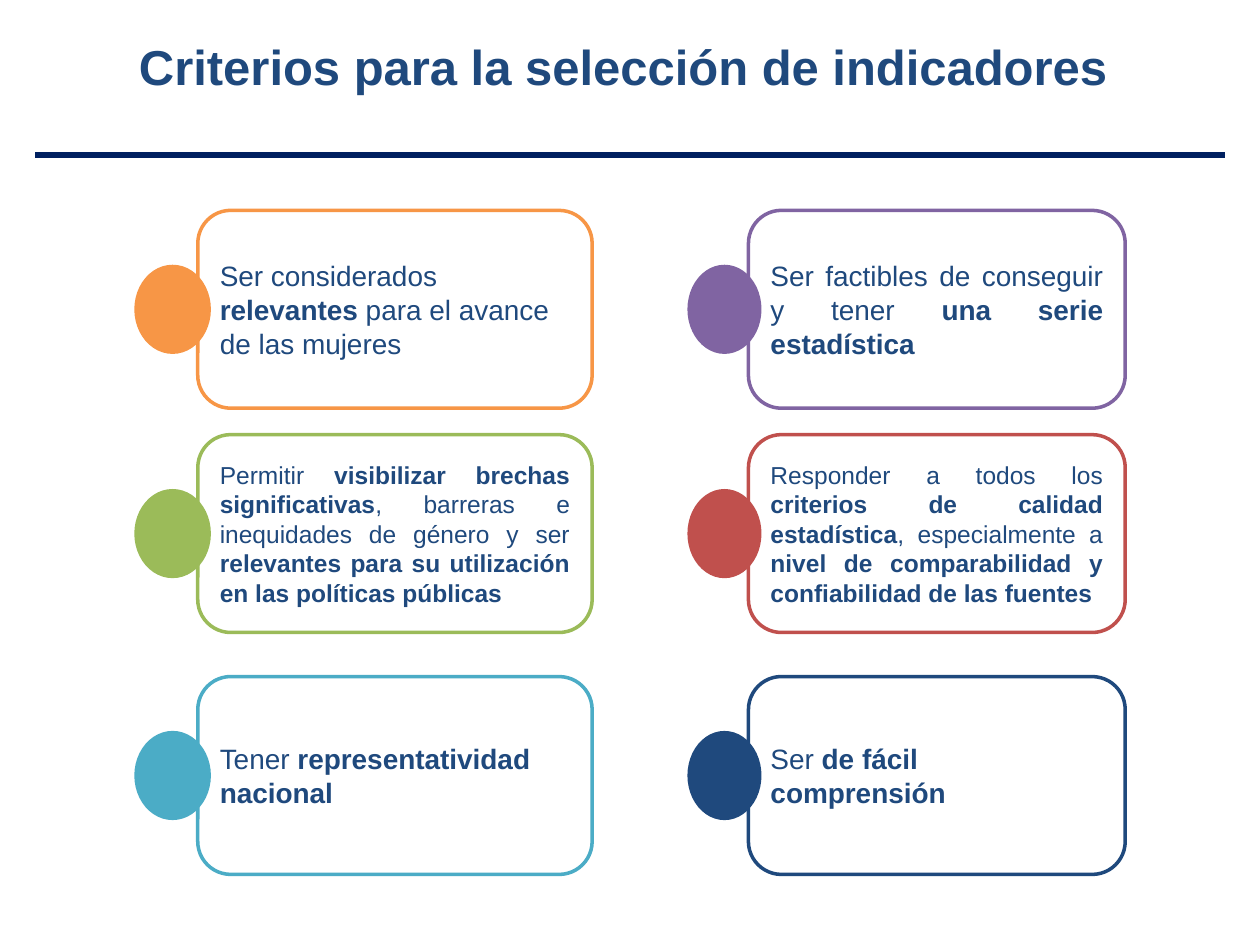
from pptx import Presentation
from pptx.dml.color import RGBColor
from pptx.enum.shapes import MSO_CONNECTOR as CONNECTOR, MSO_SHAPE as SHAPE
from pptx.enum.text import MSO_ANCHOR as ANCHOR, PP_ALIGN as ALIGN
from pptx.oxml.ns import qn
from pptx.util import Inches, Pt
from lxml.etree import SubElement

TITLE = "Criterios para la selección de indicadores"
INK, RULE = "1F497D", "002060"
ROW_TOPS = [1.67, 3.45, 5.37]
CARD_HEIGHT, DOT_HEIGHT = 1.57, 0.68
COLUMNS = [
    {"dot": (1.08, 0.58), "card": (1.57, 3.13), "criteria": [
        ("F79646", 16, ALIGN.LEFT,
         ["Ser considerados ", "relevantes", " para el avance de las mujeres"]),
        ("9BBB59", 14, ALIGN.JUSTIFY,
         ["Permitir ", "visibilizar brechas significativas",
          ", barreras e inequidades de género y ser ",
          "relevantes para su utilización en las políticas públicas"]),
        ("4BACC6", 16, ALIGN.LEFT, ["Tener ", "representatividad nacional"]),
    ]},
    {"dot": (5.47, 0.56), "card": (5.94, 2.99), "criteria": [
        ("8064A2", 16, ALIGN.JUSTIFY,
         ["Ser factibles de conseguir y tener ", "una serie estadística"]),
        ("C0504D", 14, ALIGN.JUSTIFY,
         ["Responder a todos los ", "criterios de calidad estadística",
          ", especialmente a ",
          "nivel de comparabilidad y confiabilidad de las fuentes"]),
        ("1F497D", 16, ALIGN.LEFT, ["Ser ", "de fácil\vcomprensión"]),
    ]},
]


def color(value):
    return RGBColor.from_string(value)


def write(paragraph, texts, size, align, first_bold=False):
    """Write runs that alternate between regular and bold."""
    paragraph.alignment = align
    for index, text in enumerate(texts):
        for part, piece in enumerate(text.split("\v")):
            if part:
                paragraph.add_line_break()
            span = paragraph.add_run()
            span.text = piece
            look = {"name": "Arial", "size": Pt(size),
                    "bold": first_bold != bool(index % 2)}
            for name, value in look.items():
                setattr(span.font, name, value)
            span.font.color.rgb = color(INK)


def add_outlined(page, kind, bounds, line, filled):
    shape = page.shapes.add_shape(kind, *map(Inches, bounds))
    shape.shadow.inherit = False
    if filled:
        shape.fill.solid()
        shape.fill.fore_color.rgb = color(line)
    else:
        shape.fill.background()
    shape.line.color.rgb = color(line)
    shape.line.width = Pt(2)
    return shape


def add_title(page):
    title = page.shapes.title
    bounds = {"left": 0.41, "top": 0.24, "width": 9.07, "height": 0.57}
    for name, value in bounds.items():
        setattr(title, name, Inches(value))
    frame = title.text_frame
    frame.word_wrap = True
    frame.vertical_anchor = ANCHOR.MIDDLE
    write(frame.paragraphs[0], [TITLE], 28, ALIGN.CENTER, first_bold=True)


def add_rule(page):
    rule = page.shapes.add_connector(
        CONNECTOR.STRAIGHT, *map(Inches, (0.28, 1.23, 9.72, 1.23)))
    rule.line.color.rgb = color(RULE)
    rule.line.width = Pt(3)
    SubElement(rule._element.spPr, qn("a:effectLst"))


def add_criterion(page, column, top, criterion):
    accent, size, align, texts = criterion
    dot_left, dot_width = column["dot"]
    card_left, card_width = column["card"]
    dot_top = top + (CARD_HEIGHT - DOT_HEIGHT) / 2
    add_outlined(page, SHAPE.OVAL,
                 (dot_left, dot_top, dot_width, DOT_HEIGHT), accent, True)
    card = add_outlined(page, SHAPE.ROUNDED_RECTANGLE,
                        (card_left, top, card_width, CARD_HEIGHT), accent, False)
    frame = card.text_frame
    frame.word_wrap = True
    frame.vertical_anchor = ANCHOR.MIDDLE
    write(frame.paragraphs[0], texts, size, align)


def main():
    deck = Presentation()
    deck.slide_width, deck.slide_height = Inches(10), Inches(7.5)
    page = deck.slides.add_slide(deck.slide_layouts[5])
    add_title(page)
    add_rule(page)
    for column in COLUMNS:
        for top, criterion in zip(ROW_TOPS, column["criteria"]):
            add_criterion(page, column, top, criterion)
    deck.save("out.pptx")


if __name__ == "__main__":
    main()
